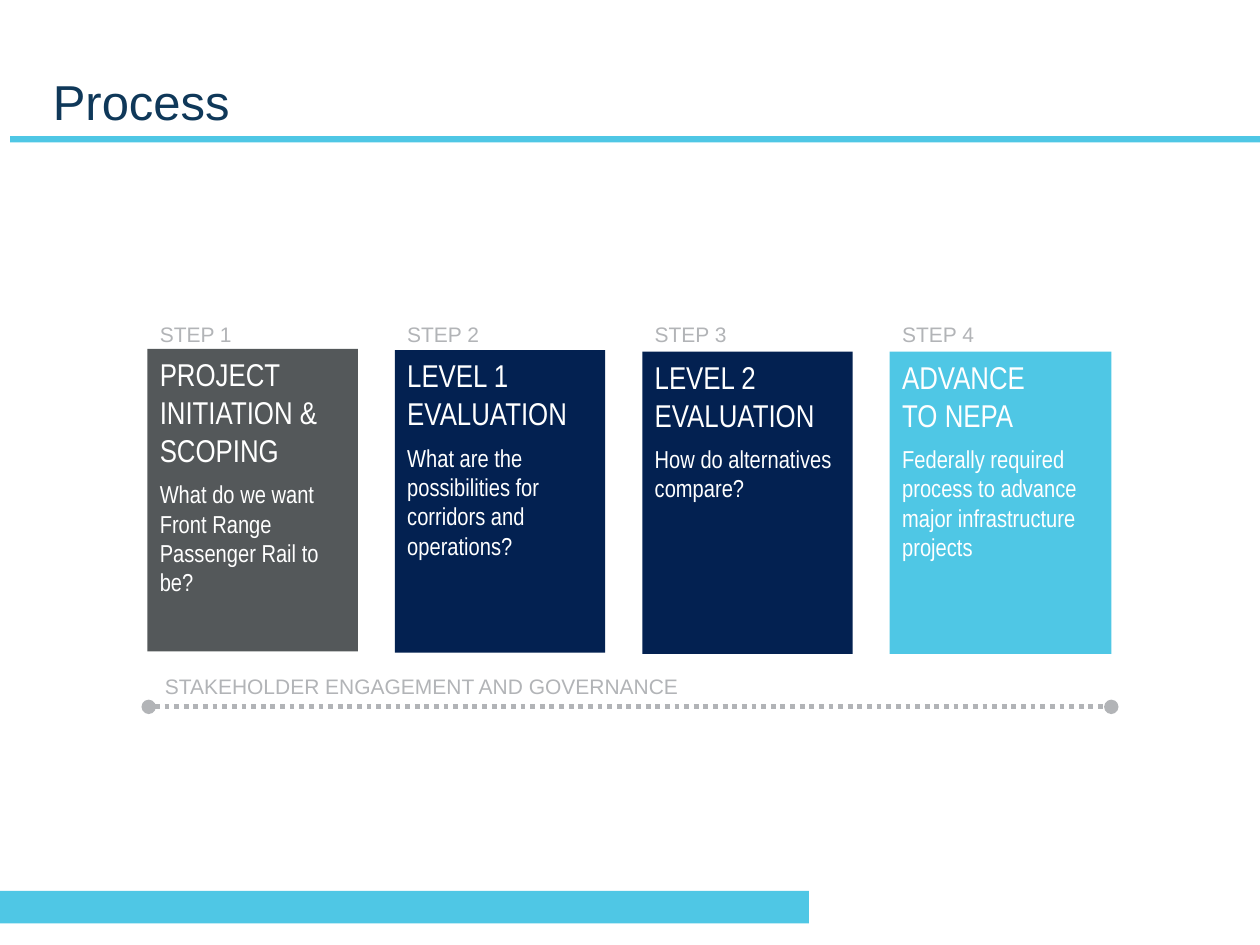
from dataclasses import dataclass

from lxml import etree
from pptx import Presentation
from pptx import util as u
from pptx.dml.color import RGBColor
from pptx.enum import dml, shapes, text
from pptx.oxml import ns


@dataclass(frozen=True)
class Theme:
    sky: str = "4FC7E5"
    navy: str = "032151"
    slate: str = "54585A"
    silver: str = "B2B4B7"
    heading: str = "0F3859"
    white: str = "FFFFFF"
    sans: str = "Arial"
    narrow: str = "Arial Narrow"
    title_size: int = 28
    step_size: int = 18
    body_size: int = 14
    label_size: int = 12


class Board:
    COLUMNS, ROWS = 100, 75

    def __init__(self, deck, theme):
        self.theme = theme
        self.column = deck.slide_width / self.COLUMNS
        self.row = deck.slide_height / self.ROWS
        self.slide = deck.slides.add_slide(deck.slide_layouts[6])

    def place(self, left, top, width, height):
        return (round(left * self.column), round(top * self.row),
                round(width * self.column), round(height * self.row))

    def style(self, paragraph, face, size, color):
        paragraph.alignment = text.PP_ALIGN.LEFT
        paragraph.font.name = face
        paragraph.font.size = u.Pt(size)
        paragraph.font.color.rgb = RGBColor.from_string(color)

    def block(self, area, color):
        block = self.slide.shapes.add_shape(
            shapes.MSO_SHAPE.RECTANGLE, *self.place(*area))
        block.shadow.inherit = False
        block.fill.solid()
        block.fill.fore_color.rgb = RGBColor.from_string(color)
        block.line.fill.background()
        return block

    def card(self, area, color, heading, question):
        frame = self.block(area, color).text_frame
        frame.word_wrap = True
        frame.vertical_anchor = text.MSO_ANCHOR.TOP
        step, body = frame.paragraphs[0], frame.add_paragraph()
        step.text, body.text = heading, question
        self.style(step, self.theme.narrow, self.theme.step_size, self.theme.white)
        self.style(body, self.theme.narrow, self.theme.body_size, self.theme.white)
        body.space_before = u.Pt(6)

    def label(self, area, words, size, color):
        frame = self.slide.shapes.add_textbox(*self.place(*area)).text_frame
        frame.word_wrap = True
        frame.text = words
        self.style(frame.paragraphs[0], self.theme.sans, size, color)
        return frame

    def title(self, area, words):
        frame = self.label(area, words, self.theme.title_size, self.theme.heading)
        frame.vertical_anchor = text.MSO_ANCHOR.BOTTOM
        frame.margin_left = frame.margin_right = u.Inches(0.25)

    def timeline(self, start, end, row):
        left, top, right, _ = self.place(start, row, end, 0)
        track = self.slide.shapes.add_connector(
            shapes.MSO_CONNECTOR.STRAIGHT, left, top, right, top)
        track.line.color.rgb = RGBColor.from_string(self.theme.silver)
        track.line.width = u.Pt(2.75)
        track.line.dash_style = dml.MSO_LINE.ROUND_DOT
        stroke = track.line._get_or_add_ln()
        for tip in ("a:headEnd", "a:tailEnd"):
            etree.SubElement(stroke, ns.qn(tip), type="oval")
        etree.SubElement(track._element.spPr, ns.qn("a:effectLst"))


def main():
    theme = Theme()
    deck = Presentation()
    deck.slide_width, deck.slide_height = u.Inches(10), u.Inches(7.5)
    board = Board(deck, theme)

    board.block((0, 70.7, 64.2, 2.6), theme.sky)
    board.block((0.8, 10.8, 99.2, 0.5), theme.sky)
    board.title((1.7, 0, 96.7, 10.8), "Process")

    steps = [
        (27.7, 16.7, theme.slate, "PROJECT INITIATION & SCOPING",
         "What do we want Front Range Passenger Rail to be?"),
        (27.8, 16.7, theme.navy, "LEVEL 1 EVALUATION",
         "What are the possibilities for corridors and operations?"),
        (27.9, 16.7, theme.navy, "LEVEL 2 EVALUATION",
         "How do alternatives compare?"),
        (27.9, 17.6, theme.sky, "ADVANCE\nTO NEPA",
         "Federally required process to advance major infrastructure projects"),
    ]
    first, pitch = 11.7, 19.64
    for index, (top, width, color, heading, question) in enumerate(steps):
        left = first + index * pitch
        board.card((left, top, width, 24), color, heading, question)
        board.label((left, 25, 11.4, 3), f"STEP {index + 1}",
                    theme.label_size, theme.silver)

    board.timeline(11.8, 88.2, 56.1)
    board.label((12.1, 53, 47.1, 3), "STAKEHOLDER ENGAGEMENT AND GOVERNANCE",
                theme.label_size, theme.silver)
    deck.save("out.pptx")


if __name__ == "__main__":
    main()
